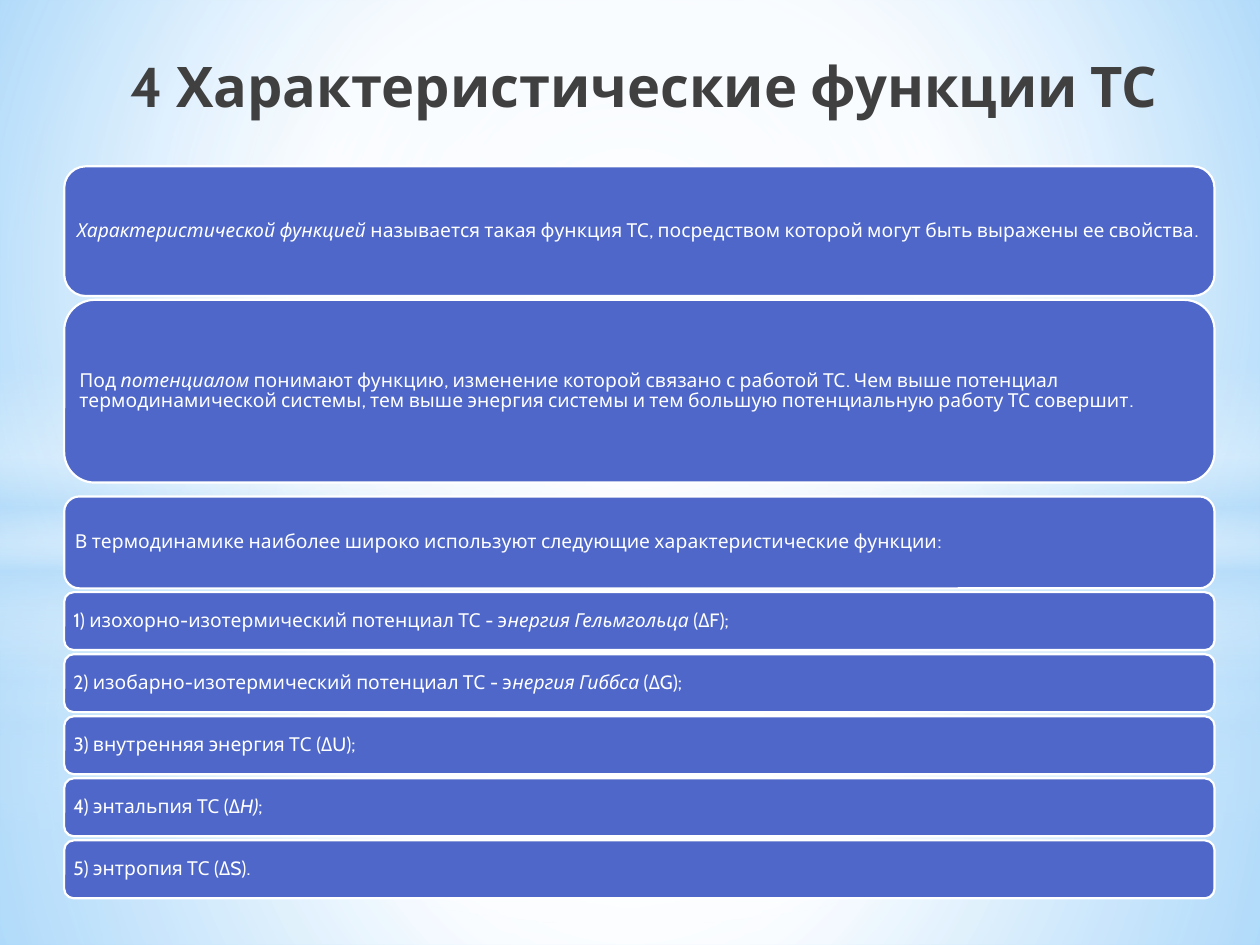
from dataclasses import dataclass
from typing import Optional

from lxml import etree
from pptx import Presentation
from pptx import util as u
from pptx.dml.color import RGBColor
from pptx.enum import shapes, text
from pptx.oxml import ns

WIDTH, HEIGHT = 10, 7.5
FONT = "Cabin"
WHITE = RGBColor(0xFF, 0xFF, 0xFF)
PALE = RGBColor(0xB4, 0xDC, 0xFA)
SKY = RGBColor(0x9E, 0xD5, 0xFF)
DEEP_SKY = RGBColor(0x5B, 0xB9, 0xFF)
INDIGO = RGBColor(0x4E, 0x67, 0xC8)
CHARCOAL = RGBColor(0x40, 0x40, 0x40)

CARD_LEFT, CARD_WIDTH = 0.51, 9.13
ITEM_TOP, ITEM_PITCH, ITEM_HEIGHT = 4.7, 0.4925, 0.46


@dataclass
class Stop:
    position: int
    color: RGBColor
    opacity: int = 100


@dataclass
class Gradient:
    """A circular gradient around focus (left, top, right, bottom), or a vertical one."""
    stops: list[Stop]
    focus: Optional[tuple[int, int, int, int]] = (50, 50, 50, 50)


@dataclass
class Layer:
    kind: shapes.MSO_SHAPE
    top: float
    height: float
    gradient: Gradient


@dataclass
class Card:
    top: float
    height: float
    wording: str  # parts between asterisks are italic


def glow(middle: int, opacities: tuple[int, int, int]) -> Gradient:
    return Gradient([Stop(*values) for values in
                     zip((0, middle, 100), (WHITE, WHITE, PALE), opacities)])


def halo(edge: int) -> Gradient:
    return Gradient([Stop(0, WHITE), Stop(edge, WHITE, 0)])


BACKDROP = Gradient([Stop(0, SKY), Stop(60, WHITE), Stop(100, DEEP_SKY)], (20, 10, 20, 60))
HORIZON = Gradient([Stop(0, WHITE, 0), Stop(29, WHITE, 30), Stop(45, PALE, 40),
                    Stop(55, WHITE, 26), Stop(65, PALE, 60), Stop(100, WHITE, 0)], None)
RECTANGLE, OVAL = shapes.MSO_SHAPE.RECTANGLE, shapes.MSO_SHAPE.OVAL


def scenery(horizon: float, band_top: float, halo_edge: int,
            ground: Gradient, sky: Gradient) -> list[Layer]:
    return [
        Layer(RECTANGLE, horizon, HEIGHT - horizon, ground),
        Layer(RECTANGLE, 0, horizon, sky),
        Layer(RECTANGLE, band_top, HEIGHT / 3, HORIZON),
        Layer(OVAL, 1.75, 5.58, halo(halo_edge)),
    ]


LAYERS = (scenery(5.58, 4.12, 56, glow(37, (91, 76, 79)), glow(48, (89, 62, 79)))
          + scenery(4.23, 2.9, 54, glow(37, (92, 77, 80)), glow(48, (90, 63, 80))))

STATEMENTS = [
    Card(1.32, 1.03, "*Характеристической функцией* называется такая функция ТС, "
                     "посредством которой могут быть выражены ее свойства."),
    Card(2.38, 1.45, "Под *потенциалом* понимают функцию, изменение которой связано с "
                     "работой ТС. Чем выше потенциал термодинамической системы, тем выше "
                     "энергия системы и тем большую потенциальную работу ТС совершит."),
    Card(3.94, 0.73, "В термодинамике наиболее широко используют следующие "
                     "характеристические функции:"),
]
FUNCTIONS = [
    "1) изохорно-изотермический потенциал ТС - э*нергия Гельмгольца* (ΔF);",
    "2) изобарно-изотермический потенциал ТС - э*нергия Гиббса* (ΔG);",
    "3) внутренняя энергия ТС (ΔU);",
    "4) энтальпия ТС (Δ*H)*;",
    "5) энтропия ТС (ΔS).",
]
ITEMS = [Card(ITEM_TOP + row * ITEM_PITCH, ITEM_HEIGHT, wording)
         for row, wording in enumerate(FUNCTIONS)]


def apply_gradient(properties, gradient: Gradient) -> None:
    """Put the gradient in place of the empty fill of the given properties."""
    def add(parent, tag: str, **attributes):
        values = {name: str(value) for name, value in attributes.items()}
        return etree.SubElement(parent, ns.qn(tag), values)

    fill = etree.Element(ns.qn("a:gradFill"), rotWithShape="1")
    stop_list = add(fill, "a:gsLst")
    for stop in gradient.stops:
        mark = add(stop_list, "a:gs", pos=stop.position * 1000)
        color = add(mark, "a:srgbClr", val=stop.color)
        if stop.opacity < 100:
            add(color, "a:alpha", val=stop.opacity * 1000)
    if gradient.focus:
        circle = add(fill, "a:path", path="circle")
        sides = {side: share * 1000 for side, share in zip("ltrb", gradient.focus)}
        add(circle, "a:fillToRect", **sides)
    else:
        add(fill, "a:lin", ang=90 * 60000, scaled=0)
    empty = properties.find(ns.qn("a:noFill"))
    properties.replace(empty, fill)


def draw_layer(page, layer: Layer) -> None:
    shape = page.shapes.add_shape(layer.kind, 0, u.Inches(layer.top),
                                  u.Inches(WIDTH), u.Inches(layer.height))
    shape.shadow.inherit = False
    shape.fill.background()
    apply_gradient(shape._element.spPr, layer.gradient)
    shape.line.fill.background()


def draw_card(page, card: Card) -> None:
    box = page.shapes.add_shape(shapes.MSO_SHAPE.ROUNDED_RECTANGLE, u.Inches(CARD_LEFT),
                                u.Inches(card.top), u.Inches(CARD_WIDTH),
                                u.Inches(card.height))
    box.shadow.inherit = False
    box.fill.solid()
    box.fill.fore_color.rgb = INDIGO
    box.line.color.rgb = WHITE
    box.line.width = u.Pt(1.25)

    frame = box.text_frame
    frame.word_wrap = True
    frame.vertical_anchor = text.MSO_ANCHOR.MIDDLE
    frame.margin_left = frame.margin_right = u.Inches(0.05)
    frame.margin_top = frame.margin_bottom = u.Inches(0.05)
    para = frame.paragraphs[0]
    para.alignment = text.PP_ALIGN.LEFT
    para.line_spacing = 0.9
    para.font.name, para.font.size = FONT, u.Pt(11)
    para.font.color.rgb = WHITE
    for index, wording in enumerate(card.wording.split("*")):
        if wording:
            span = para.add_run()
            span.text = wording
            if index % 2:
                span.font.italic = True


def set_title(page, wording: str) -> None:
    title = page.shapes.title
    title.left, title.top = u.Inches(0.35), 0
    title.width, title.height = u.Inches(9.53), u.Inches(0.99)
    frame = title.text_frame
    frame.text = wording
    frame.word_wrap = True
    frame.auto_size = text.MSO_AUTO_SIZE.NONE
    frame.vertical_anchor = text.MSO_ANCHOR.BOTTOM
    para = frame.paragraphs[0]
    para.alignment = text.PP_ALIGN.CENTER
    para.font.name, para.font.size, para.font.bold = FONT, u.Pt(32), True
    para.font.color.rgb = CHARCOAL
    page.shapes._spTree.append(title._element)  # in front of the scenery


def main() -> None:
    deck = Presentation()
    deck.slide_width, deck.slide_height = u.Inches(WIDTH), u.Inches(HEIGHT)
    page = deck.slides.add_slide(deck.slide_layouts.get_by_name("Title Only"))
    page.background.fill.background()
    apply_gradient(page._element.cSld.bg.bgPr, BACKDROP)
    for layer in LAYERS:
        draw_layer(page, layer)
    set_title(page, "4 Характеристические функции ТС")
    for card in STATEMENTS + ITEMS:
        draw_card(page, card)
    deck.save("out.pptx")


if __name__ == "__main__":
    main()
